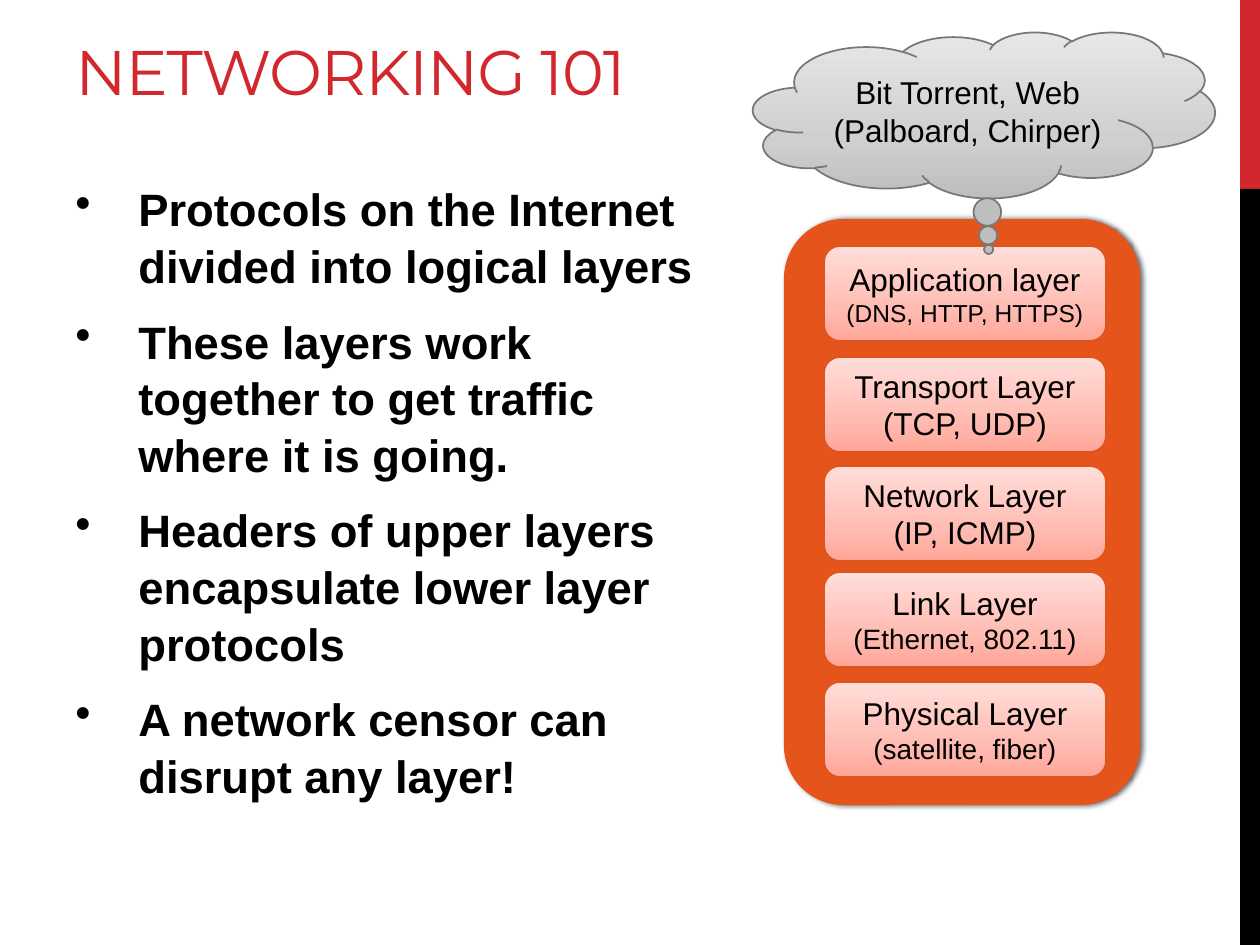
"""Build the Networking 101 slide: protocol layers beside four bullet points."""
import copy

import pptx
import pptx.dml.color
import pptx.enum.shapes
import pptx.enum.text
import pptx.oxml
import pptx.oxml.ns
import pptx.util

PX = 914400 / 126
SHAPE = pptx.enum.shapes.MSO_SHAPE
ALIGN = pptx.enum.text.PP_ALIGN
ANCHOR = pptx.enum.text.MSO_ANCHOR
qn = pptx.oxml.ns.qn

COLORS = {"red": "D1282E", "black": "000000", "orange": "E5551B",
          "layer_line": "DC551F", "cloud_line": "777777"}
PINK = [(0, "FFA698"), (0.35, "FFBCB3"), (1, "FFDED9")]
GREY = [(0, "BEBEBE"), (0.35, "CFCFCF"), (1, "E7E7E7")]

TITLE = "NETWORKING 101"
BULLETS = [
    "Protocols on the Internet divided into logical layers",
    "These layers work together to get traffic where it is going.",
    "Headers of upper layers encapsulate lower layer protocols",
    "A network censor can disrupt any layer!",
]
LAYERS = [
    (246, "Application layer", "(DNS, HTTP, HTTPS)", 14),
    (357, "Transport Layer", "(TCP, UDP)", 18),
    (466, "Network Layer", "(IP, ICMP)", 18),
    (572, "Link Layer", "(Ethernet, 802.11)", 16),
    (682, "Physical Layer", "(satellite, fiber)", 16),
]
CLOUD = "Bit Torrent, Web (Palboard, Chirper)"
BARS = [(0, 189, "red"), (189, 756, "black")]


def rgb(value):
    return pptx.dml.color.RGBColor.from_string(value)


def emu(*lengths):
    return [pptx.util.Emu(round(n * PX)) for n in lengths]


def add_run(p, text, size, font="Arial", color="black", bold=False):
    r = p.add_run()
    r.text = text
    r.font.size = pptx.util.Pt(size)
    r.font.name = font
    r.font.bold = bold
    r.font.color.rgb = rgb(COLORS[color])
    return r


def add_shape(s, kind, box, color=None):
    sp = s.shapes.add_shape(kind, *emu(*box))
    sp.shadow.inherit = False
    sp.line.fill.background()
    if color:
        sp.fill.solid()
        sp.fill.fore_color.rgb = rgb(COLORS[color])
    return sp


def add_gradient_shape(s, kind, box, stops, line, lines):
    sp = add_shape(s, kind, box)
    sp.fill.gradient()
    sp.fill.gradient_angle = 90
    gs_list = sp.fill.gradient_stops
    first = next(sp.element.spPr.iter(qn("a:gs")))
    first.addnext(copy.deepcopy(first))
    for gs, (position, color) in zip(sp.fill.gradient_stops, stops):
        gs.position = position
        gs.color.rgb = rgb(color)
    sp.line.color.rgb = rgb(COLORS[line])
    sp.line.width = pptx.util.Pt(1)
    tf = sp.text_frame
    tf.word_wrap = True
    tf.vertical_anchor = ANCHOR.MIDDLE
    for i, (text, size) in enumerate(lines):
        p = tf.add_paragraph() if i else tf.paragraphs[0]
        p.alignment = ALIGN.CENTER
        add_run(p, text, size)
    return sp


def add_text_frame(s, box, anchor):
    tf = s.shapes.add_textbox(*emu(*box)).text_frame
    tf.word_wrap = True
    tf.vertical_anchor = anchor
    return tf


def add_bullets(s):
    tf = add_text_frame(s, (63, 173, 654, 651), ANCHOR.TOP)
    for i, text in enumerate(BULLETS):
        p = tf.add_paragraph() if i else tf.paragraphs[0]
        p.line_spacing = 1.04
        p.space_before = pptx.util.Pt(5)
        p.space_after = pptx.util.Pt(6)
        pPr = p._p.get_or_add_pPr()
        pPr.set("marL", "457200")
        pPr.set("indent", "-457200")
        pPr.append(pptx.oxml.parse_xml(
            f'<a:buChar {pptx.oxml.ns.nsdecls("a")} char="•"/>'))
        add_run(p, text, 25.9, bold=True)


def add_stack(s):
    stack = add_shape(s, SHAPE.ROUNDED_RECTANGLE, (784, 219, 356, 586), "orange")
    stack.element.spPr.find(qn("a:effectLst")).append(pptx.oxml.parse_xml(
        f'<a:outerShdw {pptx.oxml.ns.nsdecls("a")} blurRad="38100" dist="19050" dir="0">'
        '<a:srgbClr val="000000"><a:alpha val="60000"/></a:srgbClr></a:outerShdw>'))
    for top, name, protocols, size in LAYERS:
        add_gradient_shape(s, SHAPE.ROUNDED_RECTANGLE, (824, top, 282, 95), PINK,
                           "layer_line", [(name, 18), (protocols, size)])


def main():
    prs = pptx.Presentation()
    prs.slide_width, prs.slide_height = emu(1260, 945)
    s = prs.slides.add_slide(prs.slide_layouts[6])

    for top, height, color in BARS:
        add_shape(s, SHAPE.RECTANGLE, (1240, top, 20, height), color)

    tf = add_text_frame(s, (63, 21, 1116, 93), ANCHOR.BOTTOM)
    r = add_run(tf.paragraphs[0], TITLE, 36, "Montserrat", "red")
    r.font._element.set("spc", "-60")

    add_bullets(s)
    add_stack(s)
    cloud = add_gradient_shape(s, SHAPE.CLOUD_CALLOUT, (753, 32, 462, 166), GREY,
                               "cloud_line", [(CLOUD, 18)])
    cloud.adjustments[0] = 0.01
    cloud.adjustments[1] = 0.81

    prs.save("out.pptx")


if __name__ == "__main__":
    main()
